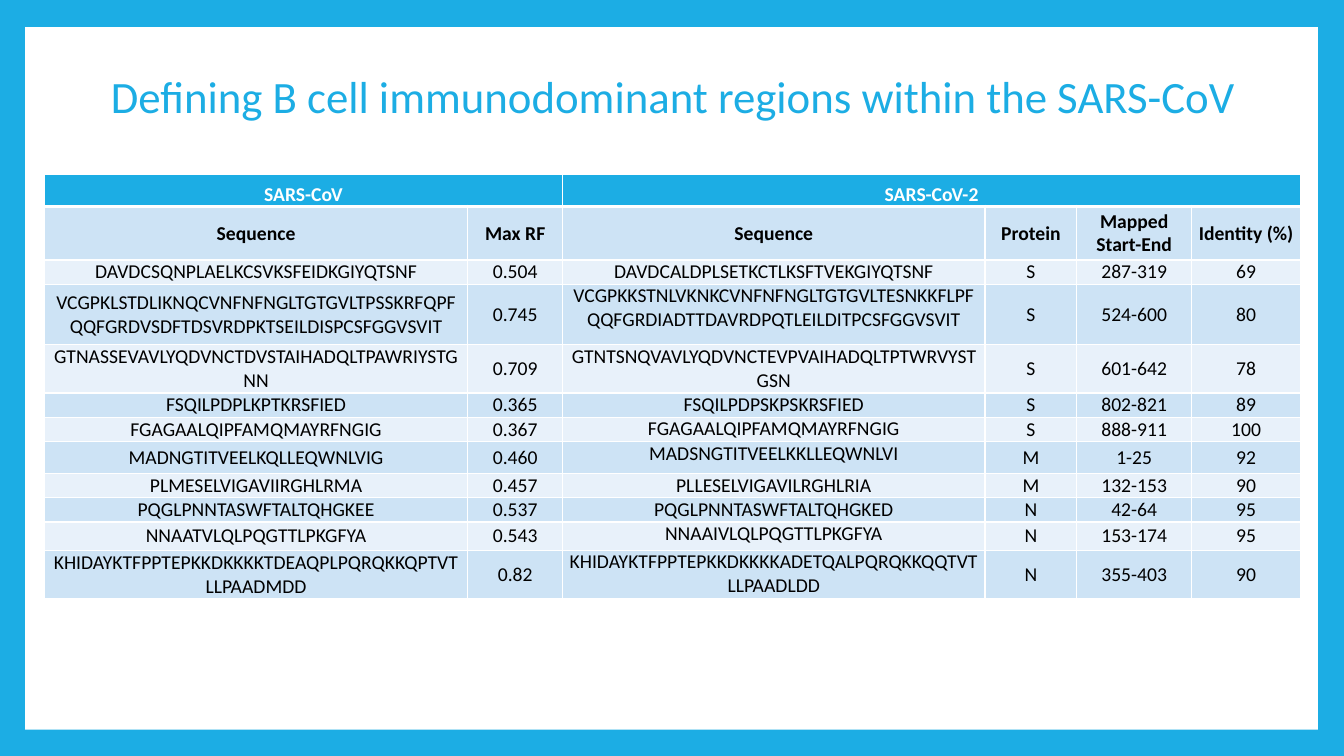
from lxml.etree import SubElement
from pptx import Presentation
from pptx.dml.color import RGBColor
from pptx.enum.shapes import MSO_SHAPE as Shape
from pptx.enum.text import MSO_ANCHOR as Anchor, PP_ALIGN as Align
from pptx.oxml.ns import qn
from pptx.util import Inches, Pt

BLUE, WHITE, BLACK = "1CADE4", "FFFFFF", "000000"
BANDS = ("CDE3F5", "E8F1FA")

COLUMN_WIDTHS = (4.2, 0.94, 4.19, 0.91, 1.14, 1.08)
ROW_HEIGHTS = (0.32, 0.53, 0.24, 0.6, 0.48, 0.24, 0.24, 0.32, 0.24, 0.24, 0.28, 0.48)
VIRUSES = {0: ("SARS-CoV", 1), 2: ("SARS-CoV-2", 5)}  # first column: name, last column
HEADINGS = ("Sequence", "Max RF", "Sequence", "Protein", "Mapped Start-End", "Identity (%)")
REGIONS = (
    ("DAVDCSQNPLAELKCSVKSFEIDKGIYQTSNF", "0.504",
     "DAVDCALDPLSETKCTLKSFTVEKGIYQTSNF", "S", "287-319", "69"),
    ("VCGPKLSTDLIKNQCVNFNFNGLTGTGVLTPSSKRFQPFQQFGRDVSDFTDSVRDPKTSEILDISPCSFGGVSVIT", "0.745",
     "VCGPKKSTNLVKNKCVNFNFNGLTGTGVLTESNKKFLPFQQFGRDIADTTDAVRDPQTLEILDITPCSFGGVSVIT",
     "S", "524-600", "80"),
    ("GTNASSEVAVLYQDVNCTDVSTAIHADQLTPAWRIYSTGNN", "0.709",
     "GTNTSNQVAVLYQDVNCTEVPVAIHADQLTPTWRVYSTGSN", "S", "601-642", "78"),
    ("FSQILPDPLKPTKRSFIED", "0.365", "FSQILPDPSKPSKRSFIED", "S", "802-821", "89"),
    ("FGAGAALQIPFAMQMAYRFNGIG", "0.367", "FGAGAALQIPFAMQMAYRFNGIG", "S", "888-911", "100"),
    ("MADNGTITVEELKQLLEQWNLVIG", "0.460", "MADSNGTITVEELKKLLEQWNLVI", "M", "1-25", "92"),
    ("PLMESELVIGAVIIRGHLRMA", "0.457", "PLLESELVIGAVILRGHLRIA", "M", "132-153", "90"),
    ("PQGLPNNTASWFTALTQHGKEE", "0.537", "PQGLPNNTASWFTALTQHGKED", "N", "42-64", "95"),
    ("NNAATVLQLPQGTTLPKGFYA", "0.543", "NNAAIVLQLPQGTTLPKGFYA", "N", "153-174", "95"),
    ("KHIDAYKTFPPTEPKKDKKKKTDEAQPLPQRQKKQPTVTLLPAADMDD", "0.82",
     "KHIDAYKTFPPTEPKKDKKKKADETQALPQRQKKQQTVTLLPAADLDD", "N", "355-403", "90"),
)


def rgb(hex_color):
    return RGBColor.from_string(hex_color)


class SlideBuilder:
    font = "Calibri"

    def __init__(self, slide):
        self.slide = slide

    def background(self, color):
        fill = self.slide.background.fill
        fill.solid()
        fill.fore_color.rgb = rgb(color)

    def panel(self, left, top, width, height, color):
        panel = self.slide.shapes.add_shape(
            Shape.RECTANGLE, Inches(left), Inches(top), Inches(width), Inches(height))
        panel.shadow.inherit = False
        panel.fill.solid()
        panel.fill.fore_color.rgb = rgb(color)
        panel.line.fill.background()

    def text(self, frame, text, size, color, bold=False):
        frame.word_wrap = True
        paragraph = frame.paragraphs[0]
        paragraph.alignment = Align.CENTER
        run = paragraph.add_run()
        run.text = text
        run.font.name, run.font.size, run.font.bold = self.font, Pt(size), bold
        run.font.color.rgb = rgb(color)
        return paragraph

    def title(self, left, top, width, height, text):
        frame = self.slide.shapes.add_textbox(
            Inches(left), Inches(top), Inches(width), Inches(height)).text_frame
        frame.vertical_anchor = Anchor.MIDDLE
        self.text(frame, text, 32, BLUE).line_spacing = 0.9

    def table(self, left, top, widths, heights):
        table = self.slide.shapes.add_table(
            len(heights), len(widths), Inches(left), Inches(top),
            Inches(sum(widths)), Inches(sum(heights))).table
        table.horz_banding = False
        for column, width in zip(table.columns, widths):
            column.width = Inches(width)
        for row, height in zip(table.rows, heights):
            row.height = Inches(height)
        return table

    def cell(self, cell, fill, anchor, top_border=1, bottom_border=1):
        cell.margin_left = cell.margin_right = Inches(0.07)
        cell.margin_top = cell.margin_bottom = 0
        cell.vertical_anchor = anchor
        properties = cell._tc.get_or_add_tcPr()
        for side, points in zip("LRTB", (1, 1, top_border, bottom_border)):
            line = SubElement(properties, qn(f"a:ln{side}"), w=str(Pt(points)))
            SubElement(SubElement(line, qn("a:solidFill")), qn("a:srgbClr"), val=WHITE)
        cell.fill.solid()
        cell.fill.fore_color.rgb = rgb(fill)


def main():
    deck = Presentation()
    deck.slide_width, deck.slide_height = Inches(13.33), Inches(7.5)
    builder = SlideBuilder(deck.slides.add_slide(deck.slide_layouts[6]))

    # Frame and title
    builder.background(BLUE)
    builder.panel(0.25, 0.27, 12.82, 6.97, WHITE)
    builder.title(0.25, 0.24, 12.86, 1.48,
                  "Defining B cell immunodominant regions within the SARS-CoV")

    # Virus header, each name spanning its columns
    table = builder.table(0.44, 1.73, COLUMN_WIDTHS, ROW_HEIGHTS)
    for column in range(len(COLUMN_WIDTHS)):
        builder.cell(table.cell(0, column), BLUE, Anchor.BOTTOM, bottom_border=3)
    for first, (virus, last) in VIRUSES.items():
        table.cell(0, first).merge(table.cell(0, last))
        builder.text(table.cell(0, first).text_frame, virus, 14, WHITE, bold=True)

    # Column headings and mapped regions, in alternating bands
    for row, values in enumerate((HEADINGS, *REGIONS), start=1):
        heading = row == 1
        for column, value in enumerate(values):
            cell = table.cell(row, column)
            mapped_sequence = column == 2 and not heading
            builder.cell(cell, BANDS[(row - 1) % 2],
                         Anchor.TOP if mapped_sequence else Anchor.MIDDLE,
                         top_border=3 if heading else 1)
            builder.text(cell.text_frame, value, 14, BLACK, bold=heading)

    deck.save("out.pptx")


if __name__ == "__main__":
    main()
